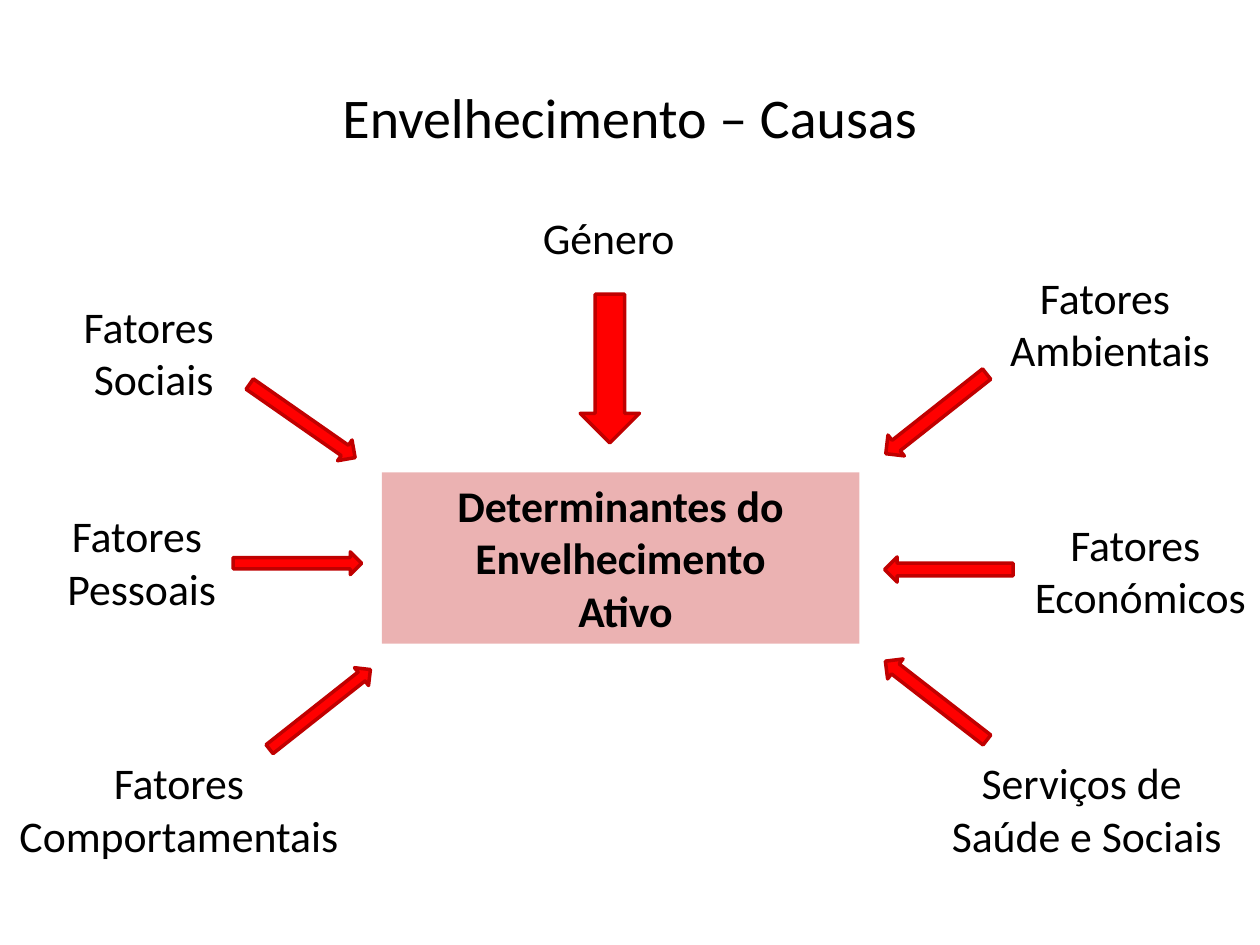
from dataclasses import dataclass

from lxml.etree import SubElement
from pptx import Presentation
from pptx.dml.color import RGBColor
from pptx.enum.shapes import MSO_SHAPE
from pptx.enum.text import MSO_ANCHOR, PP_ALIGN
from pptx.oxml.ns import qn
from pptx.util import Inches, Pt


@dataclass(frozen=True)
class Theme:
    font: str = "Calibri"
    title_size: int = 32
    body_size: int = 25
    text: RGBColor = RGBColor(0, 0, 0)
    accent: RGBColor = RGBColor(0xC0, 0, 0)
    arrow: RGBColor = RGBColor(0xFF, 0, 0)
    arrow_line: int = 2
    panel_opacity: int = 30  # per cent


class CauseSlide:
    """Places elements on a grid of 100 columns by 75 rows."""

    COLUMNS, ROWS = 100, 75

    def __init__(self, deck, theme):
        self.theme = theme
        self.column = deck.slide_width / self.COLUMNS
        self.row = deck.slide_height / self.ROWS
        self.slide = deck.slides.add_slide(deck.slide_layouts[6])

    def place(self, column, row, columns, rows):
        return (round(column * self.column), round(row * self.row),
                round(columns * self.column), round(rows * self.row))

    def add_lines(self, frame, lines, size, bold=False, align=PP_ALIGN.CENTER):
        for index, line in enumerate(lines):
            paragraph = frame.add_paragraph() if index else frame.paragraphs[0]
            paragraph.alignment = align
            run = paragraph.add_run()
            run.text = line
            run.font.name = self.theme.font
            run.font.size = Pt(size)
            run.font.bold = bold
            run.font.color.rgb = self.theme.text

    def title(self, text, area):
        frame = self.slide.shapes.add_textbox(*self.place(*area)).text_frame
        frame.word_wrap = True
        frame.vertical_anchor = MSO_ANCHOR.MIDDLE
        self.add_lines(frame, [text], self.theme.title_size)

    def label(self, lines, area, align=PP_ALIGN.CENTER):
        frame = self.slide.shapes.add_textbox(*self.place(*area)).text_frame
        frame.word_wrap = False
        self.add_lines(frame, lines, self.theme.body_size, align=align)

    def shape(self, kind, area, color):
        shape = self.slide.shapes.add_shape(kind, *self.place(*area))
        shape.shadow.inherit = False
        shape.fill.solid()
        shape.fill.fore_color.rgb = color
        return shape

    def panel(self, lines, area):
        panel = self.shape(MSO_SHAPE.RECTANGLE, area, self.theme.accent)
        panel.line.fill.background()
        color = next(panel.element.spPr.iter(qn("a:srgbClr")))
        SubElement(color, qn("a:alpha"), val=str(self.theme.panel_opacity * 1000))
        panel.text_frame.word_wrap = True
        panel.text_frame.vertical_anchor = MSO_ANCHOR.TOP
        self.add_lines(panel.text_frame, lines, self.theme.body_size, bold=True)

    def arrow(self, area, angle):
        arrow = self.shape(MSO_SHAPE.RIGHT_ARROW, area, self.theme.arrow)
        arrow.line.color.rgb = self.theme.accent
        arrow.line.width = Pt(self.theme.arrow_line)
        arrow.rotation = angle


def main():
    deck = Presentation()
    deck.slide_width, deck.slide_height = Inches(10), Inches(7.5)
    causes = CauseSlide(deck, Theme())

    # Heading
    causes.title("Envelhecimento – Causas", (5, 3, 90, 12.5))

    # Factors around the centre: lines, column, row, width
    two_lines = 9.4
    factors = [
        (["Fatores ", "Sociais"], 0, 23.3, 24.4),
        (["Fatores ", "Pessoais"], 4.3, 39.9, 13.9),
        (["Fatores", "Comportamentais"], 0, 59.5, 28.4),
        (["Fatores ", "Económicos"], 81, 40.6, 19),
        (["Fatores", " Ambientais"], 78.3, 21, 18.8),
        (["Serviços de", " Saúde e Sociais"], 73.6, 59.5, 24.5),
    ]
    for lines, column, row, width in factors:
        causes.label(lines, (column, row, width, two_lines))
    causes.label(["Género"], (42.1, 16.2, 12.6, 5.2), PP_ALIGN.LEFT)

    # Centre
    causes.panel(["Determinantes do Envelhecimento", " Ativo"],
                 (30.3, 37.5, 37.9, 13.6))

    # Arrows from each factor to the centre: column, row, thickness, angle
    length = 10.2
    arrows = [
        (20.3, 55.4, 1.8, 321.7),
        (18.5, 43.8, 1.8, 0),
        (18.9, 32.4, 2, 34.9),
        (69.2, 31.8, 2.1, 141.7),
        (70.2, 44.2, 2, 180),
        (69.2, 54.6, 2, 217.8),
    ]
    for column, row, thickness, angle in arrows:
        causes.arrow((column, row, length, thickness), angle)
    causes.arrow((42.5, 26.9, 11.8, 4.7), 90)

    deck.save("out.pptx")


if __name__ == "__main__":
    main()
